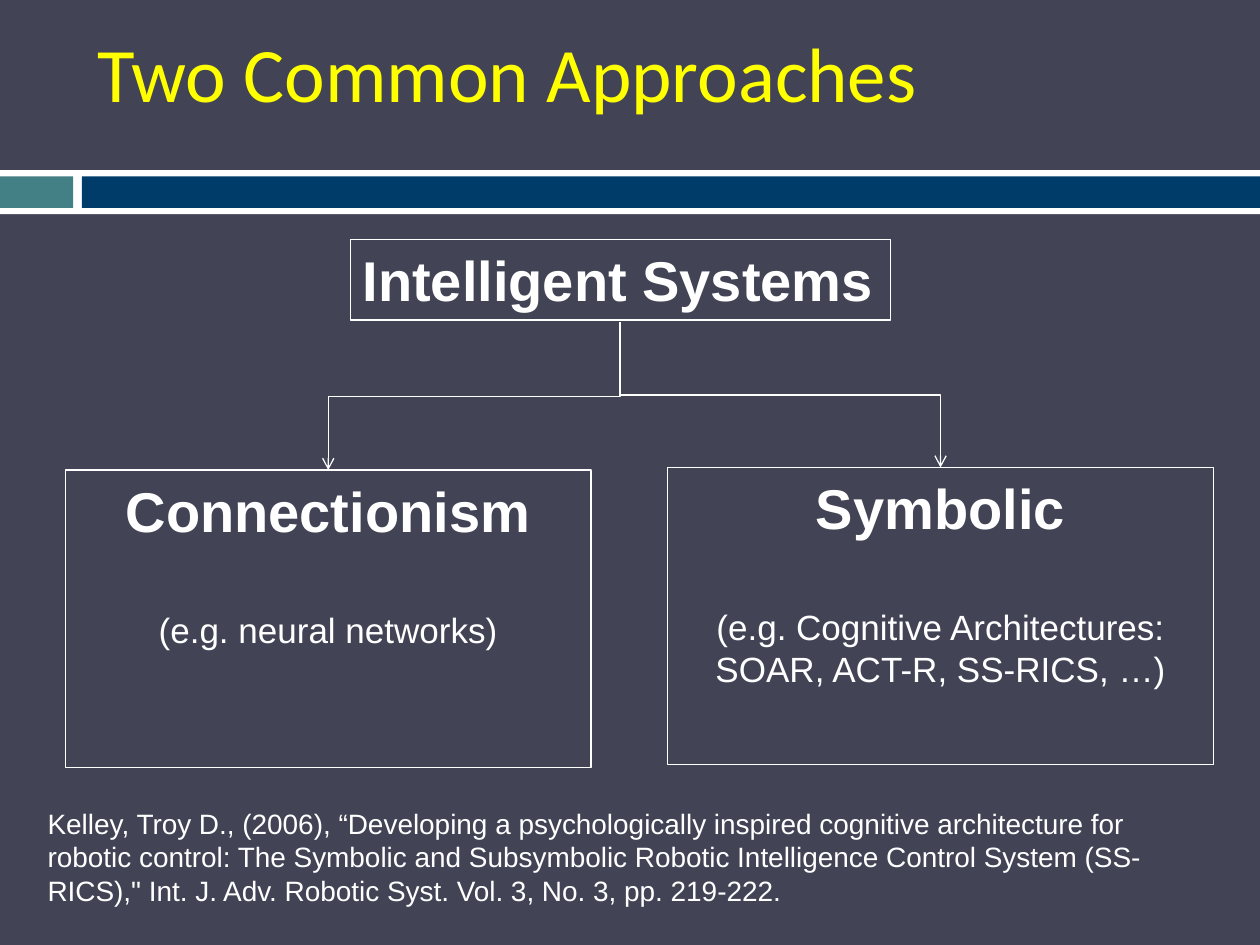
"""Build the slide on two common approaches to intelligent systems."""
import pptx
import pptx.util
import pptx.dml.color
import pptx.enum.shapes
import pptx.enum.text
import pptx.oxml
import pptx.oxml.ns

Inches = pptx.util.Inches
Pt = pptx.util.Pt
Align = pptx.enum.text.PP_ALIGN
Anchor = pptx.enum.text.MSO_ANCHOR
Fit = pptx.enum.text.MSO_AUTO_SIZE

COLORS = {"back": "424456", "white": "FFFFFF", "teal": "438086",
          "navy": "003C6A", "yellow": "FFFF00"}
TITLE = "Two Common Approaches"
BARS = [((0, 1.35, 10, 0.35), "white"),
        ((0, 1.4, 0.58, 0.25), "teal"),
        ((0.65, 1.4, 9.35, 0.25), "navy")]
ROOT = ("Intelligent Systems", (2.78, 1.9, 4.29, 0.64))
BRANCHES = [
    ("Symbolic", "(e.g. Cognitive Architectures: SOAR, ACT-R, SS-RICS, …)",
     (5.3, 3.71, 4.33, 2.36)),
    ("Connectionism", "(e.g. neural networks)", (0.52, 3.73, 4.17, 2.36)),
]
FORK = (4.92, 2.56)
SOURCE = ("Kelley, Troy D., (2006), “Developing a psychologically inspired cognitive "
          "architecture for robotic control: The Symbolic and Subsymbolic Robotic "
          "Intelligence Control System (SS-RICS),\" Int. J. Adv. Robotic Syst. "
          "Vol. 3, No. 3, pp. 219-222.")


def color(name):
    return pptx.dml.color.RGBColor.from_string(COLORS[name])


def write(para, text, size, bold=False, align=Align.LEFT, font="Arial", ink="white"):
    para.alignment = align
    span = para.add_run()
    span.text = text
    span.font.name = font
    span.font.size = Pt(size)
    span.font.bold = bold
    span.font.color.rgb = color(ink)


def add_rectangle(page, place):
    box = page.shapes.add_shape(pptx.enum.shapes.MSO_SHAPE.RECTANGLE, *map(Inches, place))
    box.shadow.inherit = False
    return box


def add_bar(page, place, fill):
    bar = add_rectangle(page, place)
    bar.fill.solid()
    bar.fill.fore_color.rgb = color(fill)
    bar.line.fill.background()


def add_frame(page, place, wrap=True):
    box = add_rectangle(page, place)
    box.fill.background()
    box.line.color.rgb = color("white")
    box.line.width = Pt(0.75)
    frame = box.text_frame
    frame.word_wrap = wrap
    frame.vertical_anchor = Anchor.TOP
    return frame


def add_elbow(page, start, end):
    """Draw a down-across-down arrow as a turned elbow connector."""
    across, down = end[0] - start[0], end[1] - start[1]
    middle_x, middle_y = (start[0] + end[0]) / 2, (start[1] + end[1]) / 2
    side = 1 if across > 0 else -1
    elbow = page.shapes.add_connector(
        pptx.enum.shapes.MSO_CONNECTOR.ELBOW,
        Inches(middle_x + side * down / 2), Inches(middle_y - abs(across) / 2),
        Inches(middle_x - side * down / 2), Inches(middle_y + abs(across) / 2))
    elbow.line.color.rgb = color("white")
    elbow.line.width = Pt(0.75)
    properties = elbow._element.spPr
    turn = 270 if across > 0 else 90
    properties.find(pptx.oxml.ns.qn("a:xfrm")).set("rot", str(turn * 60000))
    namespace = pptx.oxml.ns.nsdecls("a")
    line = properties.find(pptx.oxml.ns.qn("a:ln"))
    line.append(pptx.oxml.parse_xml(f'<a:tailEnd {namespace} type="arrow"/>'))
    properties.append(pptx.oxml.parse_xml(f"<a:effectLst {namespace}/>"))


def main():
    deck = pptx.Presentation()
    deck.slide_width, deck.slide_height = Inches(10), Inches(7.5)
    page = deck.slides.add_slide(deck.slide_layouts.get_by_name("Title Only"))
    page.background.fill.solid()
    page.background.fill.fore_color.rgb = color("back")

    for place, fill in BARS:
        add_bar(page, place, fill)

    title = page.shapes.title
    title.left, title.top, title.width, title.height = map(Inches, (0.67, 0.03, 8.92, 1.08))
    title.text_frame.auto_size = Fit.NONE
    title.text_frame.vertical_anchor = Anchor.MIDDLE
    write(title.text_frame.paragraphs[0], TITLE, 44, font="Calibri", ink="yellow")

    name, place = ROOT
    write(add_frame(page, place, wrap=False).paragraphs[0], name, 32, bold=True)

    for name, example, place in BRANCHES:
        frame = add_frame(page, place)
        write(frame.paragraphs[0], name, 32, bold=True, align=Align.CENTER)
        para = frame.add_paragraph()
        para.space_before = Pt(37)
        write(para, example, 20, align=Align.CENTER)
        add_elbow(page, FORK, (place[0] + place[2] / 2, place[1]))

    citation = page.shapes.add_textbox(*map(Inches, (0.28, 6.35, 9.46, 0.91)))
    citation.text_frame.word_wrap = True
    write(citation.text_frame.paragraphs[0], SOURCE, 16)

    deck.save("out.pptx")


if __name__ == "__main__":
    main()
